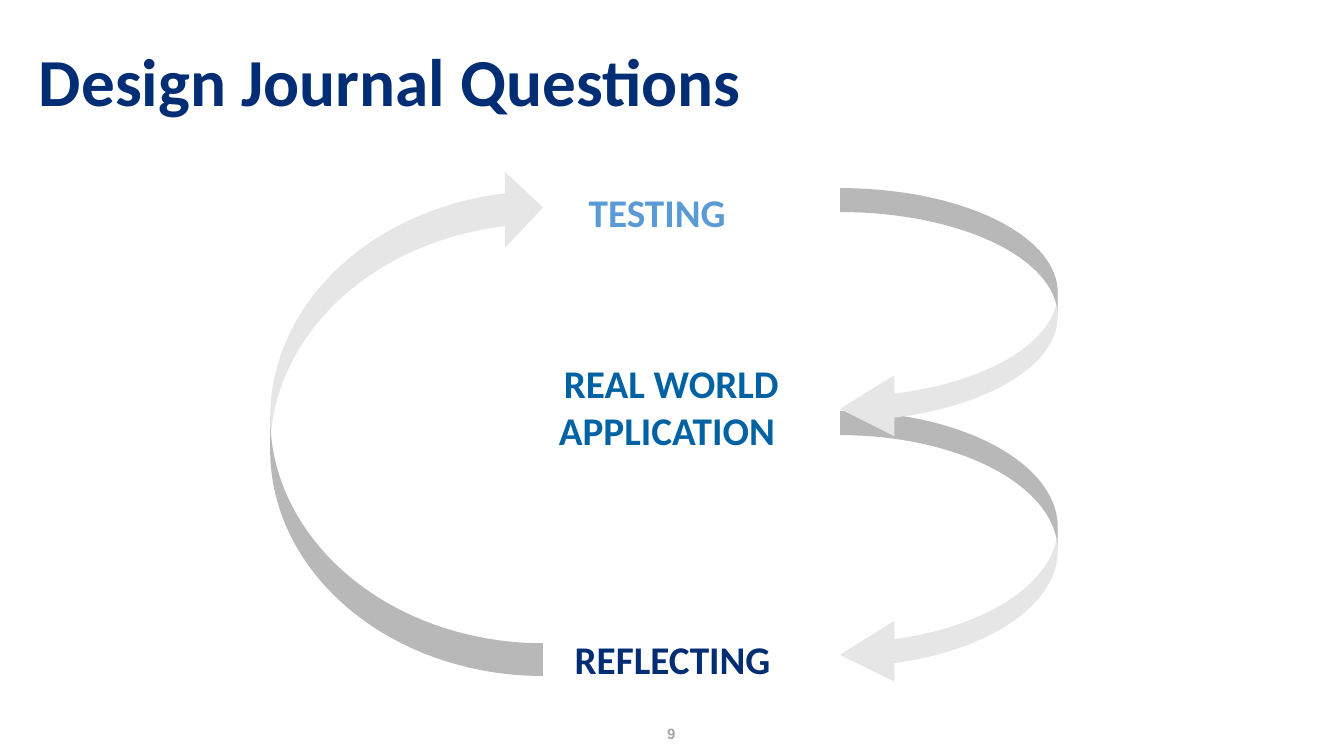
from pptx import Presentation
from pptx.dml.color import RGBColor
from pptx.enum.shapes import MSO_SHAPE
from pptx.enum.text import MSO_ANCHOR, PP_ALIGN
from pptx.util import Inches, Pt

COLORS = {
    "navy": "002D73",
    "blue": "0062A2",
    "sky": "5B9BD5",
    "arrow": "E7E6E6",
    "number": "A5A5A5",
}
SLIDE_WIDTH = 10
SLIDE_HEIGHT = SLIDE_WIDTH * 9 / 16


def write(tf, text, *, size, color, font="Calibri", align=PP_ALIGN.CENTER, spacing=None):
    p = tf.paragraphs[0]
    p.alignment = align
    p.line_spacing = spacing
    r = p.add_run()
    r.text = text
    r.font.name = font
    r.font.size = Pt(size)
    r.font.bold = True
    r.font.color.rgb = RGBColor.from_string(COLORS[color])


class Deck:
    """Holds the shared style and the current slide."""

    margin_x, margin_y = Inches(0.07), Inches(0.04)

    def __init__(self, slide):
        self.s = slide

    def text(self, text, box, anchor=MSO_ANCHOR.MIDDLE, **style):
        tf = self.s.shapes.add_textbox(*map(Inches, box)).text_frame
        tf.word_wrap = True
        tf.vertical_anchor = anchor
        tf.margin_left = tf.margin_right = self.margin_x
        tf.margin_top = tf.margin_bottom = self.margin_y
        write(tf, text, **style)

    def curved_arrow(self, box, adjustments, rotation=0):
        sp = self.s.shapes.add_shape(MSO_SHAPE.CURVED_LEFT_ARROW, *map(Inches, box))
        for i, value in enumerate(adjustments):
            sp.adjustments[i] = value
        sp.rotation = rotation
        sp.shadow.inherit = False
        sp.fill.solid()
        sp.fill.fore_color.rgb = RGBColor.from_string(COLORS["arrow"])
        sp.line.fill.background()


def main():
    prs = Presentation()
    prs.slide_width, prs.slide_height = Inches(SLIDE_WIDTH), Inches(SLIDE_HEIGHT)
    deck = Deck(prs.slides.add_slide(prs.slide_layouts[6]))

    deck.text("9", (4.72, 5.35, 0.55, 0.23), anchor=MSO_ANCHOR.TOP,
              size=8, color="number", font="Arial")

    stages = [
        ("TESTING", (4.31, 1.36, 1.38, 0.43), "sky", PP_ALIGN.LEFT),
        ("REAL WORLD APPLICATION ", (3.4, 2.63, 3.19, 0.78), "blue", PP_ALIGN.CENTER),
        ("REFLECTING", (3.99, 4.69, 2.03, 0.43), "navy", PP_ALIGN.CENTER),
    ]
    for label, box, color, align in stages:
        deck.text(label, box, size=21, color=color, align=align)

    for top, height in [(3.06, 2.04), (1.4, 1.87)]:
        deck.curved_arrow((6.25, top, 1.62, height), (0.11, 0.28, 0.25))
    deck.curved_arrow((2.01, 1.26, 2.03, 3.77), (0.12, 0.28, 0.14), rotation=180)

    deck.text("Design Journal Questions", (0.22, 0.18, 9.58, 0.9),
              size=36, color="navy", align=PP_ALIGN.LEFT, spacing=0.9)

    prs.save("out.pptx")


if __name__ == "__main__":
    main()
